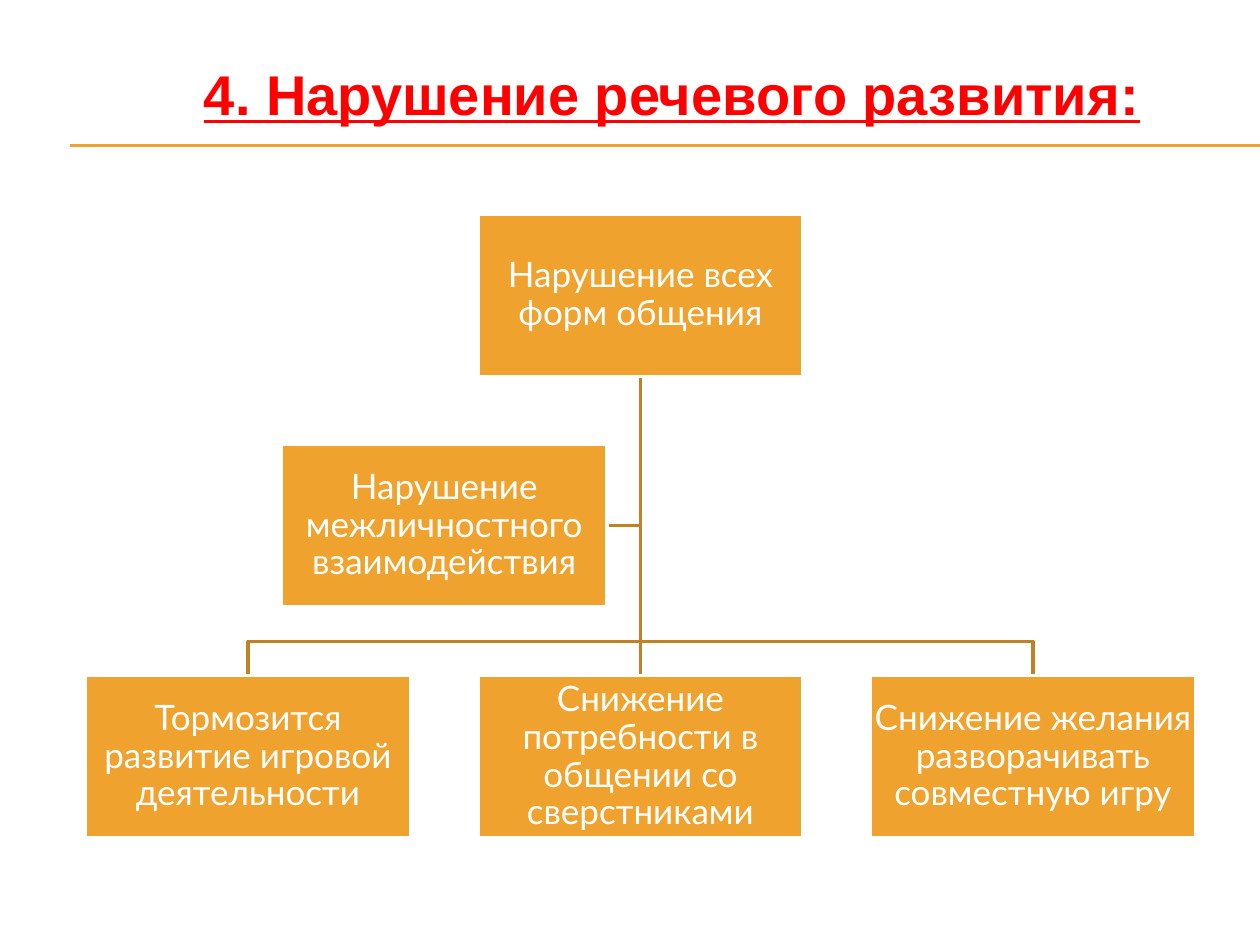
from lxml import etree
from pptx import Presentation
from pptx.dml.color import RGBColor
from pptx.enum import shapes, text
from pptx.oxml.ns import qn
from pptx.util import Pt

HUES = {"fill": "F0A22E", "link": "C08225", "title": "FF0000", "white": "FFFFFF"}
HUES = {name: RGBColor.from_string(hue) for name, hue in HUES.items()}
WIDE, HIGH = 185.8, 92.9
MID, STEP = 366, 224.3
TOP, SIDE, LOW = 122.4, 254, 386
BAR = 366.5


def style(shape, hue, width):
    """Set the outline colour and width."""
    shape.line.color.rgb = HUES[hue]
    shape.line.width = Pt(width)


def connect(start, end, hue, width):
    """Draw a straight line without a shadow."""
    line = tree.add_connector(shapes.MSO_CONNECTOR.STRAIGHT,
                              *(Pt(v) for v in start + end))
    style(line, hue, width)
    etree.SubElement(line._element.spPr, qn("a:effectLst"))
    return line


deck = Presentation()
deck.slide_width, deck.slide_height = Pt(720), Pt(540)
slide = deck.slides.add_slide(deck.slide_layouts[5])
tree = slide.shapes

# Title and the double rule under it
title = tree.title
title.left, title.top, title.width, title.height = Pt(72), Pt(30.2), Pt(624), Pt(46)
frame = title.text_frame
frame.word_wrap = True
frame.vertical_anchor = text.MSO_ANCHOR.TOP
para = frame.paragraphs[0]
para.alignment = text.PP_ALIGN.CENTER
run = para.add_run()
run.text = "4. Нарушение речевого развития:"
font = run.font
font.name, font.size, font.bold, font.underline = "Arial", Pt(32), True, True
font.color.rgb = HUES["title"]

for y in (82.8, 83.5):
    connect((40.3, y), (720, y), "fill", 0.75)

# Boxes: centre, top, wording
items = [
    (MID, TOP, "Нарушение всех форм общения"),
    (MID - STEP, LOW, "Тормозится развитие игровой деятельности"),
    (MID, LOW, "Снижение потребности в общении со сверстниками"),
    (MID + STEP, LOW, "Снижение желания разворачивать совместную игру"),
    (MID - STEP / 2, SIDE, "Нарушение межличностного взаимодействия"),
]
boxes = []
for x, y, words in items:
    box = tree.add_shape(shapes.MSO_SHAPE.RECTANGLE, Pt(x - WIDE / 2), Pt(y),
                         Pt(WIDE), Pt(HIGH))
    box.shadow.inherit = False
    box.fill.solid()
    box.fill.fore_color.rgb = HUES["fill"]
    style(box, "white", 2)
    frame = box.text_frame
    frame.word_wrap = True
    frame.vertical_anchor = text.MSO_ANCHOR.MIDDLE
    frame.margin_left = frame.margin_right = Pt(1)
    frame.margin_top = frame.margin_bottom = Pt(1)
    para = frame.paragraphs[0]
    para.alignment = text.PP_ALIGN.CENTER
    para.line_spacing = 0.9
    run = para.add_run()
    run.text = words
    run.font.name, run.font.size = "Lato", Pt(20)
    run.font.color.rgb = HUES["white"]
    boxes.append(box)

# Bent links from the top box, then the straight one
base = TOP + HIGH
level = SIDE + HIGH / 2
bends = [[(MID, level), (MID - STEP / 2 + WIDE / 2, level)]]
bends += [[(MID, BAR), (x, BAR), (x, LOW)] for x in (MID - STEP, MID + STEP)]
for bend in bends:
    pen = tree.build_freeform(Pt(MID), Pt(base))
    pen.add_line_segments([(Pt(x), Pt(y)) for x, y in bend], close=False)
    link = pen.convert_to_shape()
    link.shadow.inherit = False
    link.fill.background()
    style(link, "link", 2)

stem = connect((MID, base), (MID, LOW), "link", 2)
stem.begin_connect(boxes[0], 2)
stem.end_connect(boxes[2], 0)

# Boxes go in front so that their white outlines cover the link ends
for box in boxes:
    tree._spTree.append(box._element)

deck.save("out.pptx")
